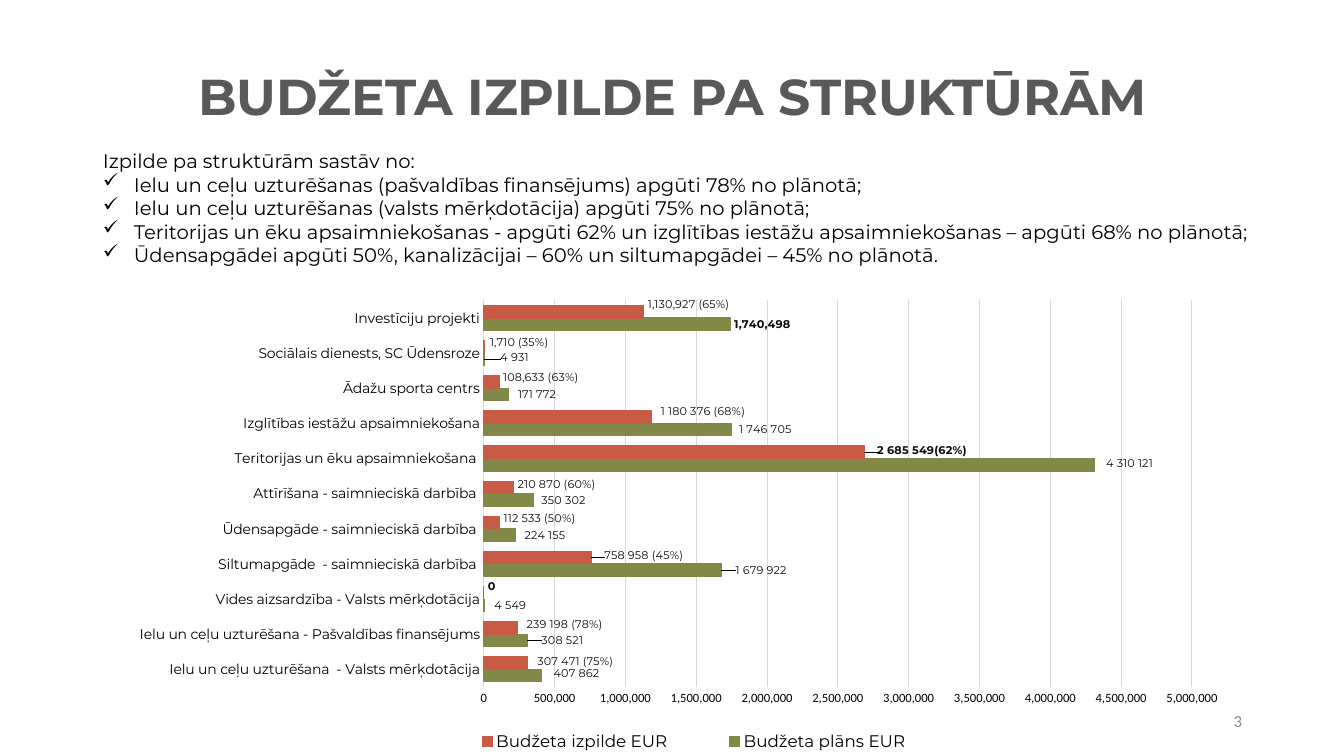
from lxml import etree
from pptx import Presentation, util as u
from pptx.chart.data import CategoryChartData
from pptx.dml.color import RGBColor
from pptx.enum import chart as ch, text as t
from pptx.oxml import parse_xml
from pptx.oxml.ns import nsdecls, qn

PX = 9071  # EMU in one px, at 100.8 px to the inch
HUES = {"title": "595959", "text": "000000", "label": "0D0D0D", "page": "8C8C8C",
        "grid": "D9D9D9", "plan": "828847", "done": "C95B46"}
FACE = "Montserrat"
CHART = (113, 274, 1117, 482)


def style(font, size, hue="text", bold=False, face=FACE):
    font.size, font.bold, font.name = u.Pt(size), bold, face
    font.color.rgb = RGBColor.from_string(HUES[hue])


def layout(x, y, w=None, h=None, inner=False):
    """Manual chart layout, in fractions of the chart's size."""
    node = parse_xml(f"<c:layout {nsdecls('c')}><c:manualLayout/></c:layout>")
    parts = [("layoutTarget", "inner")] if inner else []
    if w:
        parts += [("xMode", "edge"), ("yMode", "edge")]
    parts += [("x", x), ("y", y)]
    if w:
        parts += [("w", w), ("h", h)]
    for tag, val in parts:
        etree.SubElement(node[0], qn(f"c:{tag}")).set("val", str(val))
    return node


deck = Presentation()
deck.slide_width, deck.slide_height = 1344 * PX, 756 * PX
slide = deck.slides.add_slide(deck.slide_layouts[5])

# Title
title = slide.shapes.title
title.left, title.top, title.width, title.height = [n * PX for n in (93, 26, 1159, 146)]
title.text_frame.text = "BUDŽETA IZPILDE PA STRUKTŪRĀM"
title.text_frame.vertical_anchor = t.MSO_ANCHOR.MIDDLE
para = title.text_frame.paragraphs[0]
para.alignment, para.line_spacing = t.PP_ALIGN.CENTER, 0.9
style(para.font, 36, "title", True)

# Page number
page = slide.shapes.add_textbox(*[n * PX for n in (950, 701, 302, 40)]).text_frame
page.word_wrap, page.vertical_anchor = True, t.MSO_ANCHOR.MIDDLE
page.text = "3"
page.paragraphs[0].alignment = t.PP_ALIGN.RIGHT
style(page.paragraphs[0].font, 12, "page", face="Calibri")

# Chart rows, bottom to top: name, then value, label, label shift in px
# and bold for the plan and for the spending
ROWS = [
    ("Ielu un ceļu uzturēšana  - Valsts mērķdotācija",
     (407862, "407 862", 8, -2, False), (307471, "307 471 (75%)", 6, -2, False)),
    ("Ielu un ceļu uzturēšana - Pašvaldības finansējums",
     (308521, "308 521", 10, 0, False), (239198, "239 198 (78%)", 5, -4, False)),
    ("Vides aizsardzība - Valsts mērķdotācija",
     (4549, "4 549", 6, 0, False), (0, "", 0, -7, True)),
    ("Siltumapgāde  - saimnieciskā darbība ",
     (1679922, "1 679 922", 10, 0, False), (758958, "758 958 (45%)", 9, -2, False)),
    ("Ūdensapgāde - saimnieciskā darbība ",
     (224155, "224 155", 5, 0, False), (112533, "112 533 (50%)", 0, -4, False)),
    ("Attīrīšana - saimnieciskā darbība ",
     (350302, "350 302", 4, 0, False), (210870, "210 870 (60%)", 0, -3, False)),
    ("Teritorijas un ēku apsaimniekošana ",
     (4310121, "4 310 121", 8, -2, False), (2685549, "2 685 549(62%)", 9, -2, True)),
    ("Izglītības iestāžu apsaimniekošana",
     (1746705, "1 746 705", 4, 0, False), (1180376, "1 180 376 (68%)", 6, -6, False)),
    ("Ādažu sporta centrs",
     (171772, "171 772", 6, 0, False), (108633, "108,633 (63%)", 0, -5, False)),
    ("Sociālais dienests, SC Ūdensroze",
     (4931, "4 931", 12, -2, False), (1710, "1,710 (35%)", 2, -5, False)),
    ("Investīciju projekti",
     (1740498, "", 0, 0, True), (1130927, "1,130,927 (65%)", 0, -7, False)),
]
names, plan, done = zip(*ROWS)
data = CategoryChartData(number_format="#,##0")
data.categories = names
data.add_series("Budžeta plāns EUR", [cell[0] for cell in plan])
data.add_series("Budžeta izpilde EUR", [cell[0] for cell in done])
chart = slide.shapes.add_chart(ch.XL_CHART_TYPE.BAR_CLUSTERED,
                               *[n * PX for n in CHART], data).chart
style(chart.font, 10, face="Calibri")
chart.has_title = False
plot = chart.plots[0]
plot.gap_width, plot.overlap, plot.vary_by_categories = 80, 0, False
area = chart._chartSpace.chart.plotArea
for old in area.findall(qn("c:layout")):
    area.remove(old)
area.insert(0, layout(0.332, 0.055, 0.634, 0.802, inner=True))

chart.has_legend = True
legend = chart.legend
legend.position, legend.include_in_layout = ch.XL_LEGEND_POSITION.BOTTOM, False
style(legend.font, 12)
for old in legend._element.findall(qn("c:layout")):
    legend._element.remove(old)
legend._element.find(qn("c:legendPos")).addnext(layout(0.28, 0.94, 0.48, 0.06))

for axis, size, face in ((chart.category_axis, 10, FACE), (chart.value_axis, 9, "Calibri")):
    axis.major_tick_mark = axis.minor_tick_mark = ch.XL_TICK_MARK.NONE
    axis.format.line.fill.background()
    style(axis.tick_labels.font, size, face=face)
axis = chart.value_axis
axis.minimum_scale, axis.maximum_scale, axis.major_unit = 0, 5000000, 500000
axis.tick_labels.number_format, axis.tick_labels.number_format_is_linked = "#,##0", False
axis.major_gridlines.format.line.width = u.Pt(0.75)
axis.major_gridlines.format.line.color.rgb = RGBColor.from_string(HUES["grid"])

for bars, cells, hue in zip(plot.series, (plan, done), ("plan", "done")):
    color = RGBColor.from_string(HUES[hue])
    bars.format.fill.solid()
    bars.format.fill.fore_color.rgb = bars.format.line.color.rgb = color
    bars.format.line.width = u.Pt(0.75)
    marks = bars.data_labels
    marks.show_value, marks.position = True, ch.XL_LABEL_POSITION.OUTSIDE_END
    marks.number_format, marks.number_format_is_linked = "#,##0", False
    style(marks.font, 8, "label", True)
    for i, (_, words, dx, dy, bold) in enumerate(cells):
        label = bars.points[i].data_label
        if words:
            label.text_frame.text = words
            style(label.text_frame.paragraphs[0].runs[0].font, 8, "label", bold)
        else:
            style(label.font, 8, "label", bold)
        label.position = ch.XL_LABEL_POSITION.OUTSIDE_END
        if dx or dy:
            shift = layout(round(dx / CHART[2], 4), round(dy / CHART[3], 4))
            bars._element.xpath(f"c:dLbls/c:dLbl/c:idx[@val='{i}']")[0].addnext(shift)

# Summary list
LINES = [
    "Izpilde pa struktūrām sastāv no:",
    "Ielu un ceļu uzturēšanas (pašvaldības finansējums) apgūti 78% no plānotā;",
    "Ielu un ceļu uzturēšanas (valsts mērķdotācija) apgūti 75% no plānotā;",
    "Teritorijas un ēku apsaimniekošanas - apgūti 62% un izglītības iestāžu "
    "apsaimniekošanas – apgūti 68% no plānotā;",
    "Ūdensapgādei apgūti 50%, kanalizācijai – 60% un siltumapgādei – 45% no plānotā.",
]
body = slide.shapes.add_textbox(*[n * PX for n in (93, 144, 1182, 129)]).text_frame
body.word_wrap = True
body.text = "\n".join(LINES)
for i, para in enumerate(body.paragraphs):
    para.alignment = t.PP_ALIGN.JUSTIFY
    style(para.font, 14)
    if i:
        props = para._p.get_or_add_pPr()
        props.set("marL", str(31 * PX))
        props.set("indent", str(-31 * PX))
        props.insert(0, parse_xml(f'<a:buChar {nsdecls("a")} char="✓"/>'))

deck.save("out.pptx")
